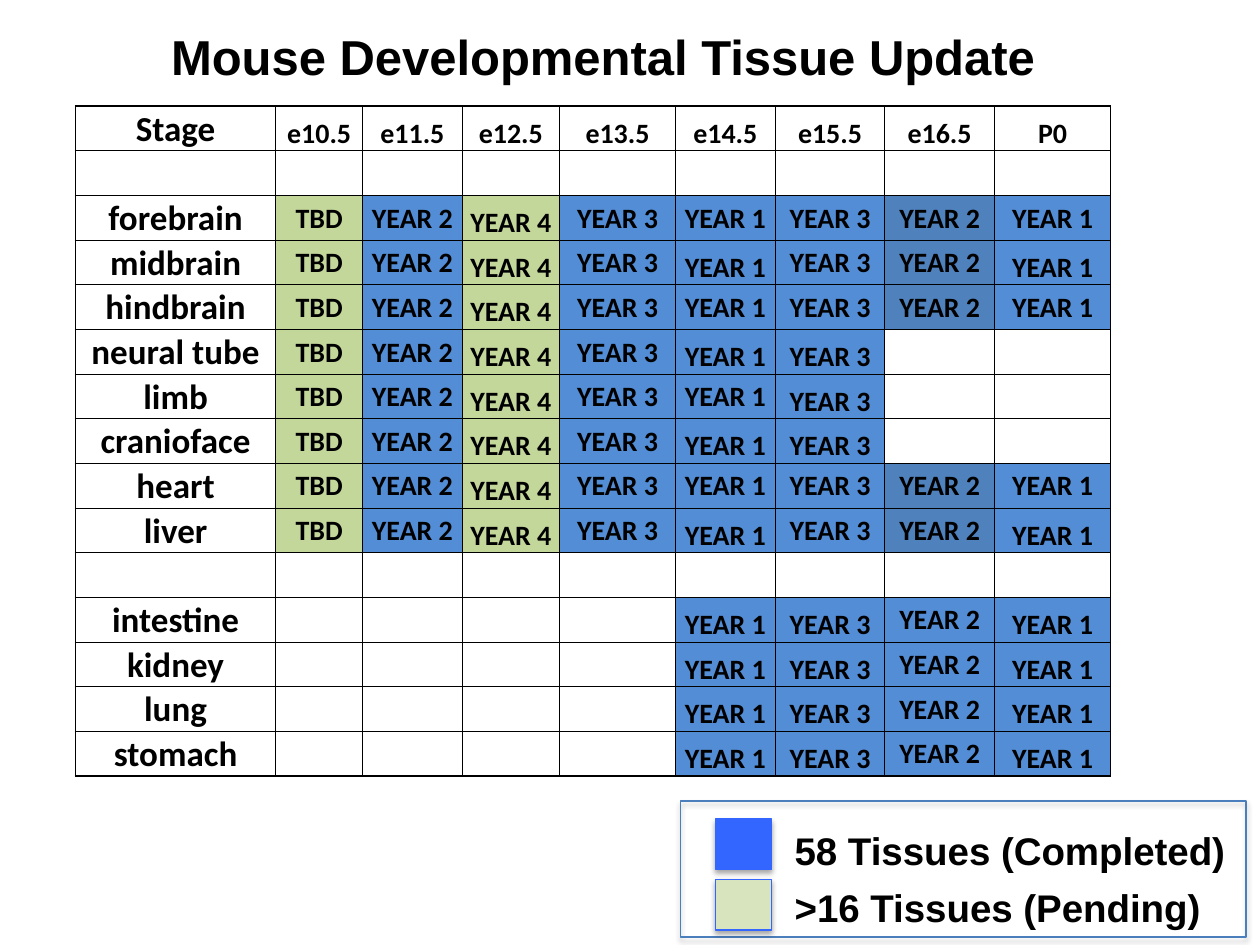
"""Build the mouse developmental tissue update slide."""
from pptx import Presentation
from pptx import oxml as ox
from pptx import util as u
from pptx.dml.color import RGBColor
from pptx.enum import shapes, text
from pptx.oxml import ns

BLACK = RGBColor(0x00, 0x00, 0x00)
WHITE = RGBColor(0xFF, 0xFF, 0xFF)
BLUE = RGBColor(0x53, 0x8D, 0xD5)
STEEL = RGBColor(0x4F, 0x81, 0xBD)
GREEN = RGBColor(0xC4, 0xD7, 0x9B)
ROYAL = RGBColor(0x33, 0x66, 0xFF)
PALE = RGBColor(0xD7, 0xE4, 0xBD)
FRAME = RGBColor(0x4B, 0x7E, 0xBC)

STAGES = ["e10.5", "e11.5", "e12.5", "e13.5", "e14.5", "e15.5", "e16.5", "P0"]
WIDTHS = [4.04, 1.75, 2.01, 1.96, 2.34, 2.01, 2.21, 2.21, 2.34]
EARLY = {
    "forebrain": "T 2 4_ 3 1 3 2 1",
    "midbrain": "T 2 4_ 3 1_ 3 2 1_",
    "hindbrain": "T 2 4_ 3 1 3 2 1",
    "neural tube": "T 2 4_ 3 1_ 3_ . .",
    "limb": "T 2 4_ 3 1 3_ . .",
    "cranioface": "T 2 4_ 3 1_ 3_ . .",
    "heart": "T 2 4_ 3 1 3 2 1",
    "liver": "T 2 4_ 3 1_ 3 2 1_",
}
LATE = dict.fromkeys(["intestine", "kidney", "lung", "stomach"],
                     ". . . . 1_ 3_ 2 1_")
FILLS = {"T": GREEN, "4": GREEN, ".": WHITE}


def decode(code, dark):
    """Turn a cell code into words, fill and anchor; "_" means bottom."""
    key = code[0]
    words = {"T": "TBD", ".": ""}.get(key, f"YEAR {key}")
    fill = STEEL if dark and key == "2" else FILLS.get(key, BLUE)
    low = code.endswith("_")
    return words, fill, text.MSO_ANCHOR.BOTTOM if low else text.MSO_ANCHOR.MIDDLE


def layout():
    """List the table rows as cells of words, fill and anchor."""
    low = text.MSO_ANCHOR.BOTTOM
    blank = [("", WHITE, low)] * len(WIDTHS)
    rows = [[(word, WHITE, low) for word in ["Stage"] + STAGES]]
    for group, dark in ((EARLY, True), (LATE, False)):
        rows.append(blank)
        for name, codes in group.items():
            cells = [decode(code, dark and col == 6)
                     for col, code in enumerate(codes.split())]
            rows.append([(name, WHITE, low)] + cells)
    return rows


class Deck:
    """Hold the style and the current slide."""

    def __init__(self):
        self.prs = Presentation()
        self.prs.slide_width, self.prs.slide_height = u.Cm(25.4), u.Cm(19.05)
        self.page = self.prs.slides.add_slide(self.prs.slide_layouts[6])

    def run(self, para, words, size, font):
        """Add one bold black run."""
        run = para.add_run()
        run.text = words
        run.font.name, run.font.size, run.font.bold = font, u.Pt(size), True
        run.font.color.rgb = BLACK

    def label(self, left, top, width, height, words, size):
        """Add a one-line text box."""
        box = self.page.shapes.add_textbox(*map(u.Cm, (left, top, width, height)))
        frame = box.text_frame
        frame.word_wrap = False
        frame.auto_size = text.MSO_AUTO_SIZE.SHAPE_TO_FIT_TEXT
        self.run(frame.paragraphs[0], words, size, "Arial")

    def box(self, left, top, width, height, line, fill=None):
        """Add a rectangle with a soft shadow below it."""
        box = self.page.shapes.add_shape(
            shapes.MSO_SHAPE.RECTANGLE, *map(u.Cm, (left, top, width, height)))
        if fill is None:
            box.fill.background()
        else:
            box.fill.solid()
            box.fill.fore_color.rgb = fill
        box.line.color.rgb, box.line.width = line, u.Pt(0.75)
        box.shadow.inherit = False
        glow = box._element.spPr.find(ns.qn("a:effectLst"))
        glow.append(ox.parse_xml(
            f'<a:outerShdw {ns.nsdecls("a")} blurRad="{u.Pt(3.1)}" dist="{u.Pt(1.8)}"'
            ' dir="5400000" rotWithShape="0"><a:srgbClr val="000000">'
            '<a:alpha val="35000"/></a:srgbClr></a:outerShdw>'))

    def edge(self, cell, sides):
        """Draw the four cell borders, given as side and points."""
        props = cell._tc.get_or_add_tcPr()
        for spot, (side, width) in enumerate(sides.items()):
            props.insert(spot, ox.parse_xml(
                f'<a:ln{side} {ns.nsdecls("a")} w="{u.Pt(width)}"><a:solidFill>'
                f'<a:srgbClr val="{BLACK}"/></a:solidFill></a:ln{side}>'))

    def cell(self, cell, words, fill, anchor, size):
        """Fill one table cell."""
        cell.margin_left = cell.margin_right = cell.margin_top = u.Cm(0.03)
        cell.margin_bottom = 0
        cell.vertical_anchor = anchor
        cell.fill.solid()
        cell.fill.fore_color.rgb = fill
        para = cell.text_frame.paragraphs[0]
        para.alignment = text.PP_ALIGN.CENTER
        if words:
            self.run(para, words, size, "Calibri")

    def table(self, left, top, widths, height, rows):
        """Add a table with thin inner and thicker outer borders."""
        last, end = len(rows) - 1, len(widths) - 1
        grid = self.page.shapes.add_table(
            len(rows), len(widths), u.Cm(left), u.Cm(top),
            u.Cm(sum(widths)), u.Cm(height * len(rows))).table
        grid.first_row = grid.horz_banding = False
        for col, width in zip(grid.columns, widths):
            col.width = u.Cm(width)
        for r, row in enumerate(rows):
            grid.rows[r].height = u.Cm(height)
            for c, (words, fill, anchor) in enumerate(row):
                cell = grid.cell(r, c)
                self.cell(cell, words, fill, anchor, 16 if c else 20)
                outer = {"L": c == 0, "R": c == end, "T": r == 0, "B": r == last}
                self.edge(cell, {s: 1 if out else 0.5 for s, out in outer.items()})


def main():
    """Compose and save the slide."""
    deck = Deck()
    deck.box(13.72, 16.15, 11.4, 2.74, FRAME)
    deck.table(1.52, 2.14, WIDTHS, 0.9, layout())
    deck.box(14.43, 16.51, 1.12, 1.02, ROYAL, ROYAL)
    deck.label(15.77, 16.54, 9.3, 1.19, "58 Tissues (Completed)", 22)
    deck.box(14.43, 17.73, 1.12, 1.02, ROYAL, PALE)
    deck.label(15.77, 17.7, 8.79, 1.19, ">16 Tissues (Pending)", 22)
    deck.label(3.2, 0.41, 18.11, 1.45, "Mouse Developmental Tissue Update", 28)
    deck.prs.save("out.pptx")


if __name__ == "__main__":
    main()
